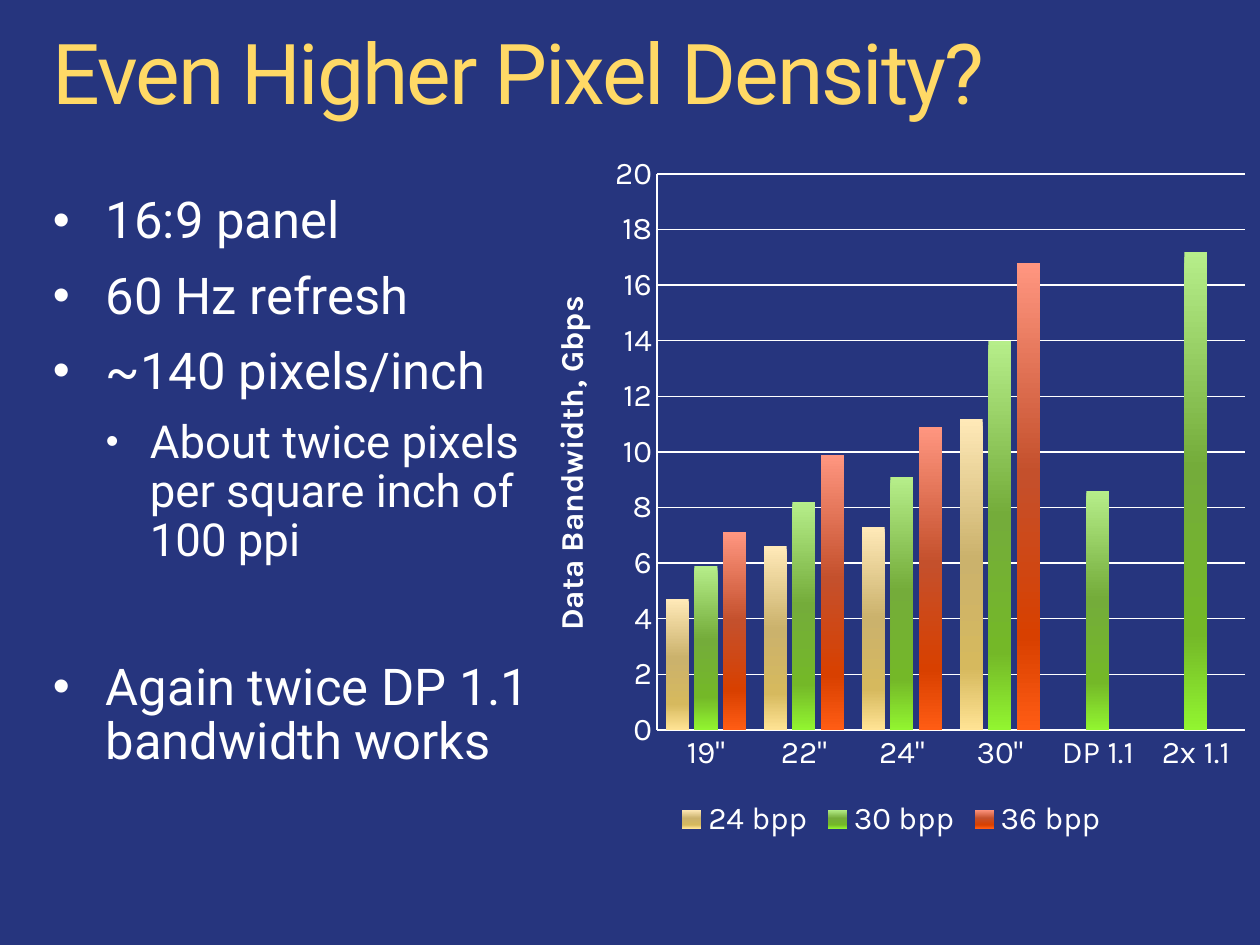
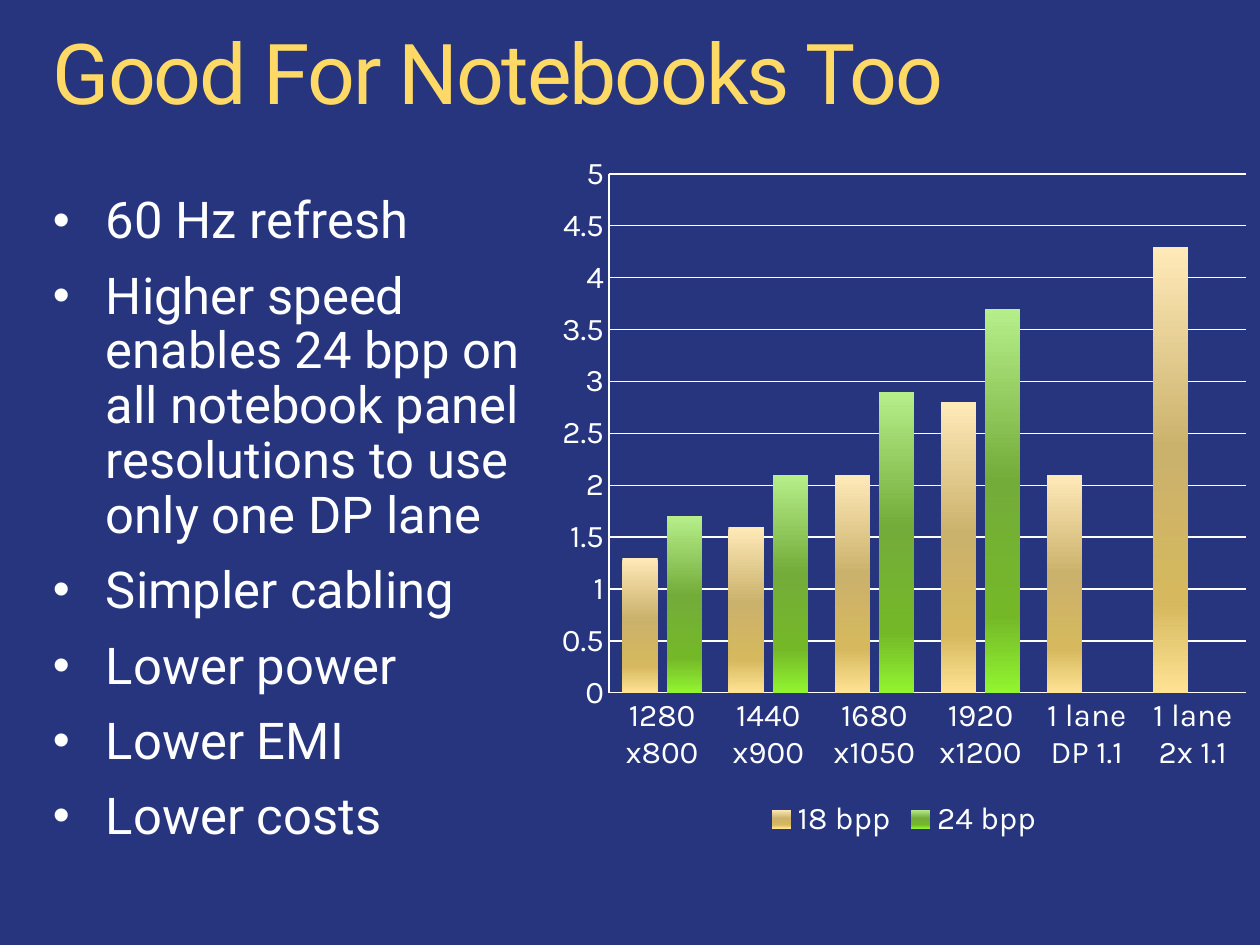
from copy import deepcopy

from lxml.etree import SubElement
from pptx import Presentation
from pptx.chart.data import CategoryChartData as Data
from pptx.dml.color import RGBColor as RGB
from pptx.enum.chart import XL_CHART_TYPE as Kind
from pptx.enum.chart import XL_LEGEND_POSITION as Place
from pptx.enum.chart import XL_TICK_MARK as Tick
from pptx.enum.text import MSO_ANCHOR as Anchor
from pptx.enum.text import MSO_AUTO_SIZE as Fit
from pptx.enum.text import PP_ALIGN as Align
from pptx.oxml.ns import qn
from pptx.util import Pt

NAVY = RGB(0x26, 0x35, 0x7E)
GOLD = RGB(0xFF, 0xD9, 0x66)
WHITE = RGB(0xFF, 0xFF, 0xFF)
SAND = ("FFE9B8", "CBB26C", "D6B95E", "FFE394")
GREEN = ("B6EE8A", "74AC3A", "74B828", "92F530")
RED = ("FF9680", "C4502C", "D84000", "FF5C14")
STOPS = (0, 0.45, 0.8, 1)

# Bullets are (level, text, space before in points).
SLIDES = [
    dict(
        title="Even Higher Pixel Density?",
        items=[
            (0, "16:9 panel", 0),
            (0, "60 Hz refresh", 11.7),
            (0, "~140 pixels/inch", 11.7),
            (1, "About twice pixels per square inch of 100 ppi", 10.8),
            (0, "Again twice DP 1.1 bandwidth works", 54),
        ],
        high=576,
        cats=['19"', '22"', '24"', '30"', "DP 1.1", "2x 1.1"],
        bars=[
            ("24 bpp", (4.7, 6.6, 7.3, 11.2, None, None), SAND),
            ("30 bpp", (5.9, 8.2, 9.1, 14, 8.6, 17.2), GREEN),
            ("36 bpp", (7.1, 9.9, 10.9, 16.8, None, None), RED),
        ],
        axis="Data Bandwidth, Gbps", top=20, step=2,
        left=523, plot=(657, 174, 588, 556),
    ),
    dict(
        title="Good For Notebooks Too",
        items=[
            (0, "60 Hz refresh", 0),
            (0, "Higher speed enables 24 bpp on all notebook panel "
                "resolutions to use only one DP lane", 11.7),
            (0, "Simpler cabling", 11.7),
            (0, "Lower power", 11.7),
            (0, "Lower EMI", 11.7),
            (0, "Lower costs", 11.7),
        ],
        high=649,
        cats=["1280 x800", "1440 x900", "1680 x1050", "1920 x1200",
              "1 lane DP 1.1", "1 lane 2x 1.1"],
        bars=[
            ("18 bpp", (1.3, 1.6, 2.1, 2.8, 2.1, 4.3), SAND),
            ("24 bpp", (1.7, 2.1, 2.9, 3.7, None, None), GREEN),
        ],
        axis=None, top=5, step=0.5,
        left=548, plot=(609, 174, 637, 519),
    ),
]

WIDE, TALL = 1260, 945
EDGE = 53
CHART_TOP, CHART_TALL = 141, 703
LEVELS = [dict(size=29, left=53, hang=53, dot=95),
          dict(size=26, left=97, hang=44, dot=80)]
FRAME = dict(margin_left=0, margin_top=0, margin_right=0, margin_bottom=0,
             word_wrap=True, vertical_anchor=Anchor.TOP,
             auto_size=Fit.SHAPE_TO_FIT_TEXT)
LINE = dict(alignment=Align.LEFT, line_spacing=0.9)


def px(num):
    return round(num * 914400 / 126)


def put(obj, **vals):
    """Set each named value on the object."""
    for name, val in vals.items():
        setattr(obj, name, val)


def ink(font, face, size, color, bold=False):
    put(font, name=face, size=Pt(size), bold=bold)
    font.color.rgb = color


def add_title(slide, text):
    shape = slide.shapes.title
    put(shape, left=px(EDGE), top=px(32), width=px(1154), height=px(90))
    put(shape.text_frame, text=text, **FRAME)
    para = shape.text_frame.paragraphs[0]
    put(para, **LINE)
    font = para.runs[0].font
    ink(font, "Roboto", 48, GOLD)
    para.runs[0]._r.get_or_add_rPr().set("spc", "-120")


def add_dot(para, left, hang, dot):
    """Give the paragraph a white hanging bullet."""
    prop = para._p.get_or_add_pPr()
    prop.set("marL", str(px(left)))
    prop.set("indent", str(-px(hang)))
    tint = SubElement(prop, qn("a:buClr"))
    SubElement(tint, qn("a:srgbClr"), val=str(WHITE))
    SubElement(prop, qn("a:buSzPct"), val=str(dot * 1000))
    SubElement(prop, qn("a:buFont"), typeface="Arial")
    SubElement(prop, qn("a:buChar"), char="•")


def add_list(slide, items, high):
    box = slide.shapes.add_textbox(px(EDGE), px(195), px(514), px(high))
    frame = box.text_frame
    put(frame, **FRAME)
    for num, (level, text, gap) in enumerate(items):
        para = frame.add_paragraph() if num else frame.paragraphs[0]
        look = LEVELS[level]
        add_dot(para, look["left"], look["hang"], look["dot"])
        put(para, level=level, space_before=Pt(gap), **LINE)
        run = para.add_run()
        run.text = text
        ink(run.font, "Roboto", look["size"], WHITE)


def shade(bar, colors):
    """Fill a series with a top-to-bottom gradient."""
    fill = bar.format.fill
    fill.gradient()
    fill.gradient_angle = 270
    stops = bar._element.find(".//" + qn("a:gsLst"))
    for _ in range(len(colors) - len(stops)):
        stops.append(deepcopy(stops[0]))
    for stop, spot, color in zip(fill.gradient_stops, STOPS, colors):
        stop.position = spot
        stop.color.rgb = RGB.from_string(color)


def pin_plot(chart, left, plot):
    """Fix the inner plot area, given in slide px."""
    area = chart._chartSpace.find(".//" + qn("c:plotArea"))
    for old in area.findall(qn("c:layout")):
        area.remove(old)
    lay = area.makeelement(qn("c:layout"))
    area.insert(0, lay)
    man = SubElement(lay, qn("c:manualLayout"))
    x, y, wide, tall = plot
    full = WIDE - left
    vals = dict(layoutTarget="inner", xMode="edge", yMode="edge",
                x=(x - left) / full, y=(y - CHART_TOP) / CHART_TALL,
                w=wide / full, h=tall / CHART_TALL)
    for name, val in vals.items():
        SubElement(man, qn("c:" + name), val=str(val))


def style_axis(axis):
    put(axis, major_tick_mark=Tick.NONE, minor_tick_mark=Tick.NONE)
    axis.format.line.color.rgb = WHITE
    axis.format.line.width = Pt(0.75)
    ink(axis.tick_labels.font, "Karla", 18, WHITE)


def add_bars(slide, part):
    data = Data()
    data.categories = part["cats"]
    for name, vals, _ in part["bars"]:
        data.add_series(name, vals)
    left = part["left"]
    chart = slide.shapes.add_chart(
        Kind.COLUMN_CLUSTERED, px(left), px(CHART_TOP),
        px(WIDE - left), px(CHART_TALL), data).chart
    put(chart, has_title=False, has_legend=True)
    ink(chart.font, "Karla", 18, WHITE)
    put(chart.legend, position=Place.BOTTOM, include_in_layout=False)
    ink(chart.legend.font, "Karla", 18, WHITE)
    put(chart.plots[0], gap_width=75, overlap=-25, vary_by_categories=False)
    for bar, (_, _, colors) in zip(chart.plots[0].series, part["bars"]):
        shade(bar, colors)
    axis = chart.value_axis
    for each in (chart.category_axis, axis):
        style_axis(each)
    put(axis, minimum_scale=0, maximum_scale=part["top"],
        major_unit=part["step"], has_major_gridlines=True)
    put(axis.tick_labels, number_format="General",
        number_format_is_linked=False)
    grid = axis.major_gridlines.format.line
    grid.color.rgb = WHITE
    grid.width = Pt(0.75)
    if part["axis"]:
        frame = axis.axis_title.text_frame
        frame.text = part["axis"]
        ink(frame.paragraphs[0].runs[0].font, "Karla", 18, WHITE, True)
    pin_plot(chart, left, part["plot"])


def main():
    deck = Presentation()
    put(deck, slide_width=px(WIDE), slide_height=px(TALL))
    back = deck.slide_master.background.fill
    back.solid()
    back.fore_color.rgb = NAVY
    for part in SLIDES:
        slide = deck.slides.add_slide(deck.slide_layouts[5])
        add_title(slide, part["title"])
        add_list(slide, part["items"], part["high"])
        add_bars(slide, part)
    deck.save("out.pptx")


if __name__ == "__main__":
    main()
